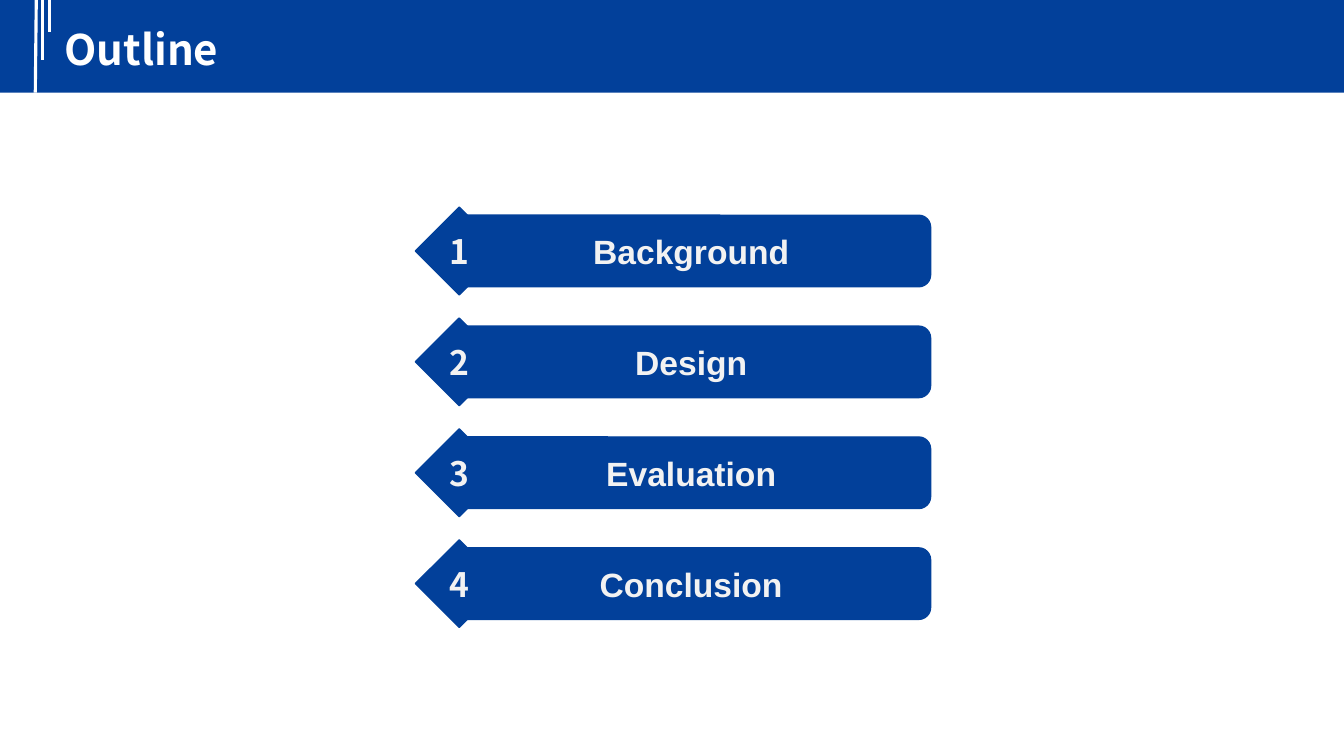
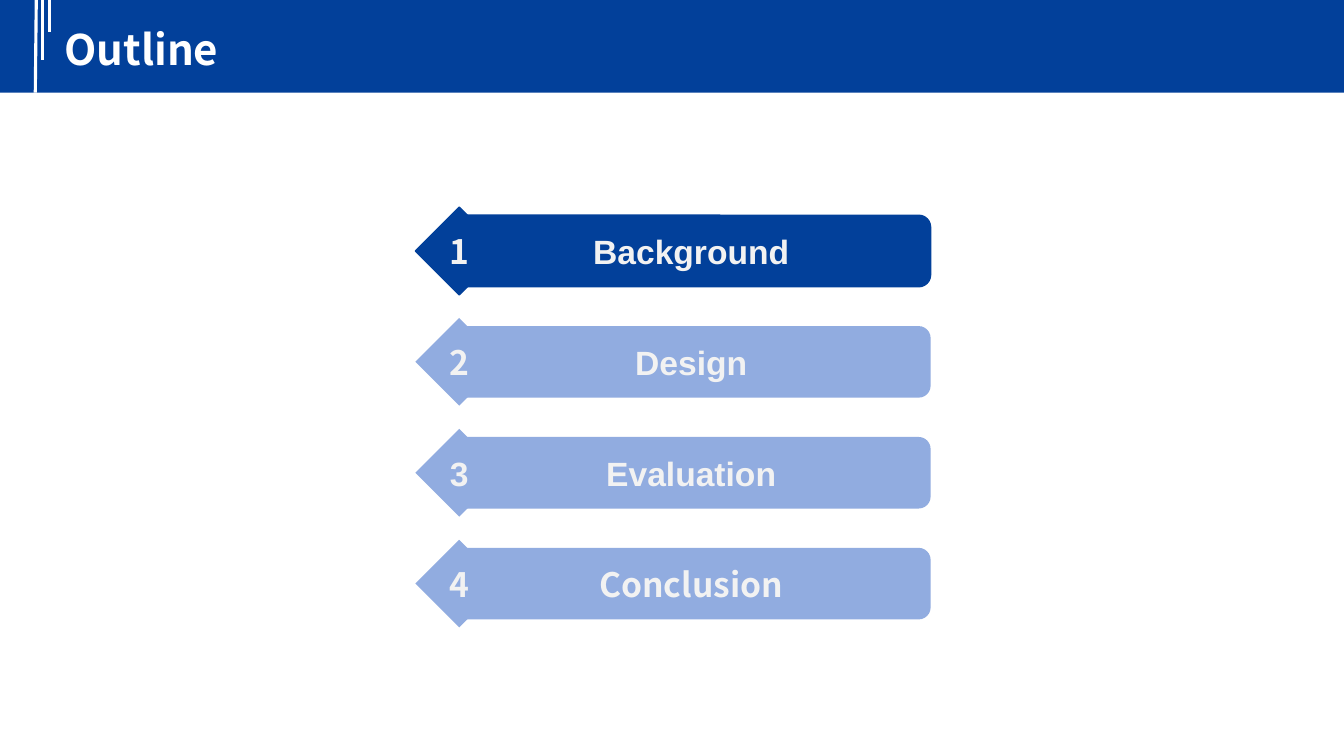
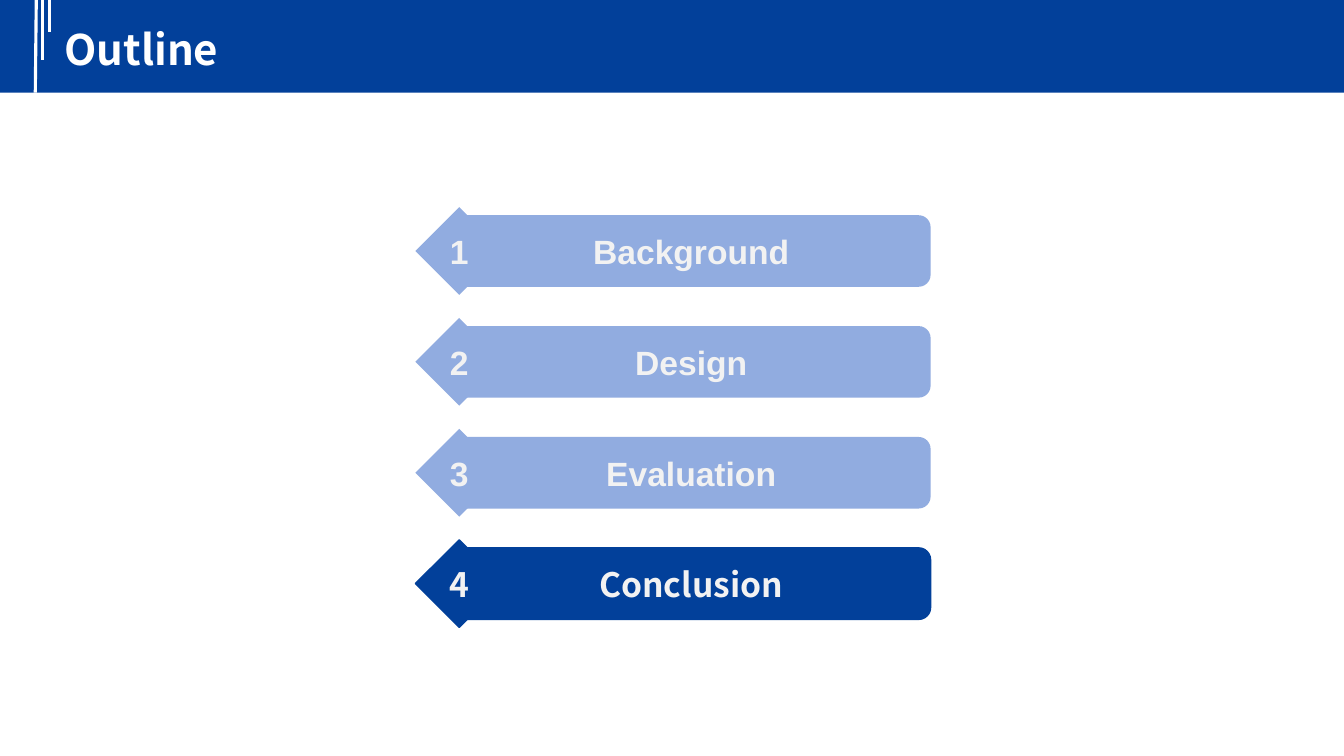
from lxml import etree
from pptx import Presentation
from pptx import util as u
from pptx.dml.color import RGBColor
from pptx.enum import shapes, text
from pptx.oxml.ns import qn

BLUE, PALE, WHITE, OFF_WHITE = "02409A", "91ACE0", "FFFFFF", "F2F2F2"
SANS, CJK = "Arial", "Noto Sans CJK SC"

BAND_TOP, BAND_HEIGHT = -0.02, 0.94
STRIPES = [(0.36, 0.35, 0.92), (0.42, 0.42, 0.6), (0.49, 0.49, 0.32)]  # top x, bottom x, length

FIRST_ROW, ROW_PITCH = 2.49, 1.1  # row centres
BAR_LEFT, BAR_WIDTH, BAR_HEIGHT = 4.48, 4.75, 0.71
DIAMOND_LEFT, DIAMOND_SIZE = 4.12, 0.87
TOPICS = ["Background", "Design", "Evaluation", "Conclusion"]

# Per slide: highlighted rows, font of each number, font of each topic
OUTLINES = [
    ({1, 2, 3, 4}, [CJK] * 4, [SANS] * 4),
    ({1}, [CJK, CJK, SANS, CJK], [SANS, SANS, SANS, CJK]),
    ({4}, [SANS, SANS, SANS, CJK], [SANS, SANS, SANS, CJK]),
]


def color(hex_string):
    return RGBColor.from_string(hex_string)


def write(shape, words, size=24, font=SANS, fill=OFF_WHITE,
          align=text.PP_ALIGN.CENTER, wrap=False):
    """Put one bold, vertically centred line into a shape."""
    frame = shape.text_frame
    frame.word_wrap = wrap
    frame.vertical_anchor = text.MSO_ANCHOR.MIDDLE
    frame.margin_top = frame.margin_bottom = 0
    paragraph = frame.paragraphs[0]
    paragraph.alignment = align
    run = paragraph.add_run()
    run.text = words
    run.font.size = u.Pt(size)
    run.font.name = font
    run.font.bold = True
    run.font.color.rgb = color(fill)


presentation = Presentation()
presentation.slide_width = u.Inches(13.33)
presentation.slide_height = u.Inches(7.5)
blank = presentation.slide_layouts[6]

for highlighted, number_fonts, topic_fonts in OUTLINES:
    slide = presentation.slides.add_slide(blank)

    band = slide.shapes.add_shape(
        shapes.MSO_SHAPE.RECTANGLE, 0, u.Inches(BAND_TOP),
        presentation.slide_width, u.Inches(BAND_HEIGHT))
    band.shadow.inherit = False
    band.fill.solid()
    band.fill.fore_color.rgb = color(BLUE)
    band.line.fill.background()

    for top_x, bottom_x, length in STRIPES:
        stripe = slide.shapes.add_connector(
            shapes.MSO_CONNECTOR.STRAIGHT,
            u.Inches(top_x), 0, u.Inches(bottom_x), u.Inches(length))
        stripe.line.color.rgb = color(WHITE)
        stripe.line.width = u.Pt(2.25)
        etree.SubElement(stripe.element.spPr, qn("a:effectLst"))

    title = slide.shapes.add_textbox(
        u.Inches(0.54), u.Inches(0.18), u.Inches(9.12), u.Inches(0.6))
    write(title, "Outline", size=30, font=CJK, fill=WHITE,
          align=text.PP_ALIGN.LEFT, wrap=True)

    rows = zip(TOPICS, number_fonts, topic_fonts)
    for number, (topic, number_font, topic_font) in enumerate(rows, start=1):
        middle = FIRST_ROW + (number - 1) * ROW_PITCH
        group = slide.shapes.add_group_shape()
        parts = [
            (shapes.MSO_SHAPE.ROUNDED_RECTANGLE, BAR_LEFT, BAR_WIDTH, BAR_HEIGHT,
             topic, topic_font),
            (shapes.MSO_SHAPE.DIAMOND, DIAMOND_LEFT, DIAMOND_SIZE, DIAMOND_SIZE,
             str(number), number_font),
        ]
        for preset, left, width, height, words, font in parts:
            shape = group.shapes.add_shape(
                preset, u.Inches(left), u.Inches(middle - height / 2),
                u.Inches(width), u.Inches(height))
            shape.shadow.inherit = False
            shape.fill.solid()
            if number in highlighted:
                shape.fill.fore_color.rgb = color(BLUE)
                shape.line.color.rgb = color(BLUE)
                shape.line.width = u.Pt(1)
            else:
                shape.fill.fore_color.rgb = color(PALE)
                shape.line.fill.background()
            write(shape, words, font=font)

presentation.save("out.pptx")
